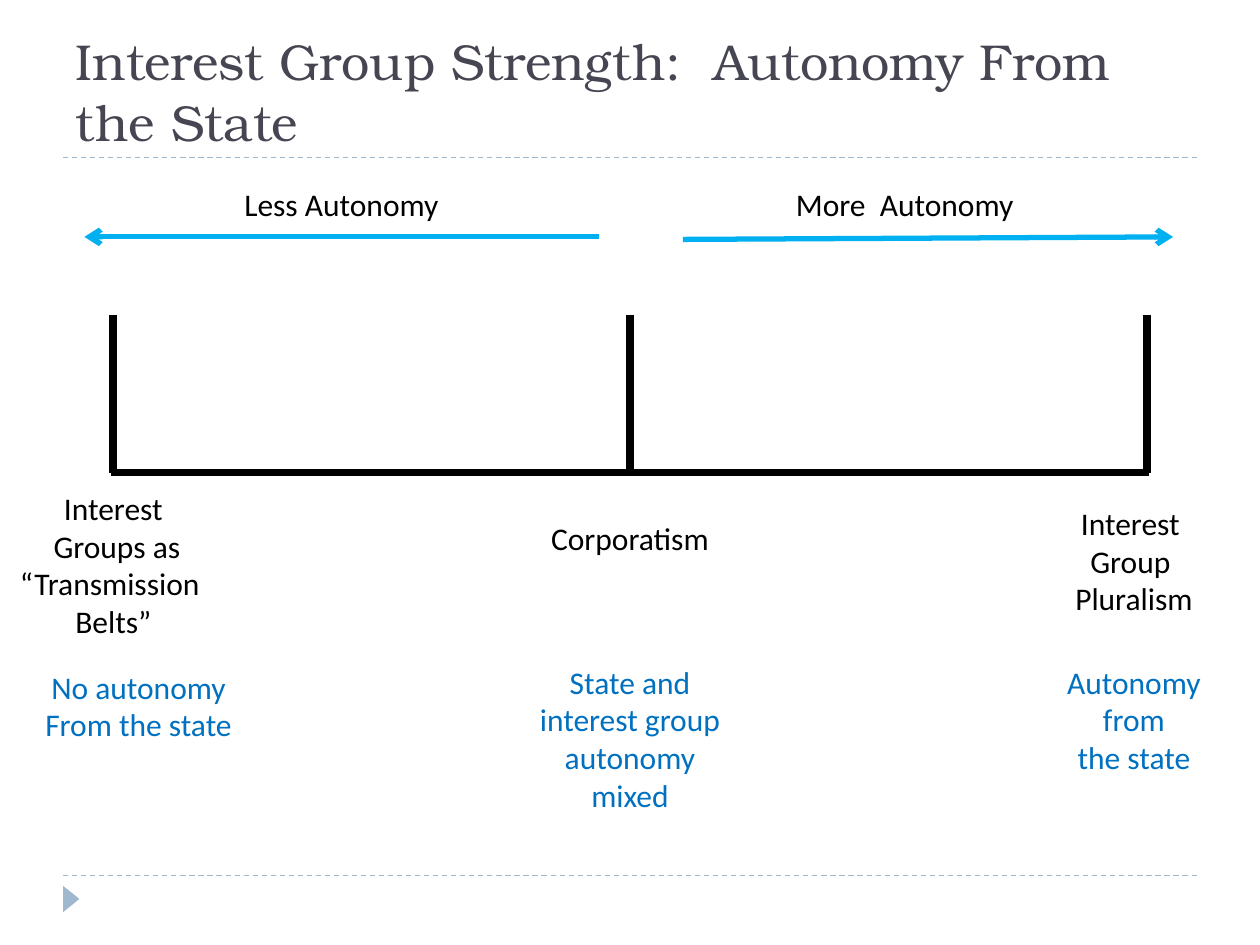
from collections import namedtuple

from lxml.etree import SubElement
from pptx import Presentation
from pptx.dml.color import RGBColor
from pptx.enum.dml import MSO_LINE
from pptx.enum.shapes import MSO_CONNECTOR, MSO_SHAPE
from pptx.enum.text import MSO_ANCHOR, PP_ALIGN
from pptx.oxml.ns import qn
from pptx.util import Inches, Pt

Box = namedtuple("Box", "left top width height")

SLATE = RGBColor(0x46, 0x46, 0x53)
MIST = RGBColor(0x9F, 0xB8, 0xCD)
BLACK = RGBColor(0, 0, 0)
SKY = RGBColor(0x00, 0xB0, 0xF0)
BLUE = RGBColor(0x00, 0x70, 0xC0)
TITLE_FONT, BODY_FONT = "TeX Gyre Bonum", "Calibri"


def add_line(shapes, start, end, color, width):
    line = shapes.add_connector(MSO_CONNECTOR.STRAIGHT,
                                *(Inches(v) for v in (*start, *end)))
    line.line.color.rgb = color
    line.line.width = Pt(width)
    SubElement(line._element.spPr, qn("a:effectLst"))
    return line


def add_arrow(shapes, start, end):
    arrow = add_line(shapes, start, end, SKY, 3)
    SubElement(arrow.line._get_or_add_ln(), qn("a:tailEnd"), type="arrow")


def add_label(shapes, box, lines, color=BLACK):
    tf = shapes.add_textbox(*(Inches(v) for v in box)).text_frame
    tf.word_wrap = True
    tf.text = "\n".join(lines)
    for p in tf.paragraphs:
        p.alignment = PP_ALIGN.CENTER
        p.font.name, p.font.size = BODY_FONT, Pt(18)
        p.font.color.rgb = color


def add_page_frame(shapes, box):
    """Dashed rules along the top and bottom of the box, and a corner marker."""
    right, bottom = box.left + box.width, box.top + box.height
    for y in (bottom, box.top):
        rule = add_line(shapes, (box.left, y), (right, y), MIST, 0.75)
        rule.line.dash_style = MSO_LINE.DASH
    marker = shapes.add_shape(
        MSO_SHAPE.ISOSCELES_TRIANGLE, Inches(box.left - 0.04),
        Inches(bottom + 0.12), Inches(0.21), Inches(0.13))
    marker.rotation = 90
    marker.shadow.inherit = False
    marker.fill.solid()
    marker.fill.fore_color.rgb = MIST
    marker.line.fill.background()


def add_title(title, box, text):
    title.left, title.top, title.width, title.height = (Inches(v) for v in box)
    tf = title.text_frame
    tf.text = text
    tf.word_wrap = True
    tf.vertical_anchor = MSO_ANCHOR.BOTTOM
    p = tf.paragraphs[0]
    p.alignment = PP_ALIGN.LEFT
    p.font.name, p.font.size = TITLE_FONT, Pt(28.8)
    p.font.color.rgb = SLATE


def add_directions(shapes, box):
    """Arrows from near the centre to both ends of the box, labelled above."""
    y = box.top + box.height
    add_arrow(shapes, (box.left + 4.08, y), (box.left, y))
    add_arrow(shapes, (box.left + 4.75, y + 0.02), (box.left + box.width, y))
    for offset, text in ((0.83, "Less Autonomy"), (5.3, "More  Autonomy")):
        add_label(shapes, Box(box.left + offset, box.top, 2.42, 0.4), [text])


def add_scale(shapes, box):
    """Baseline with a tall tick at each end and one in the middle."""
    scale = shapes.add_group_shape().shapes
    base, right = box.top + box.height, box.left + box.width
    add_line(scale, (box.left - 0.02, base), (right + 0.02, base), BLACK, 4.5)
    for x in (box.left, right, box.left + box.width / 2):
        add_line(scale, (x, base), (x, box.top), BLACK, 4.5)


def add_captions(shapes, box, captions, color):
    """Captions given as centre, top and width shares of the box, and lines."""
    for center, top, width, lines in captions:
        w = width * box.width
        add_label(shapes, Box(box.left + center * box.width - w / 2,
                              box.top + top * box.height, w,
                              0.1 + 0.3 * len(lines)), lines, color)


def main():
    prs = Presentation()
    prs.slide_width, prs.slide_height = Inches(10), Inches(7.5)
    slide = prs.slides.add_slide(prs.slide_layouts[5])
    shapes = slide.shapes

    add_page_frame(shapes, Box(0.5, 1.25, 9, 5.7))
    add_title(shapes.title, Box(0.5, 0.17, 9, 1.08),
              "Interest Group Strength:  Autonomy From the State")
    add_directions(shapes, Box(0.67, 1.42, 8.64, 0.46))
    add_scale(shapes, Box(0.9, 2.5, 8.2, 1.25))
    add_captions(shapes, Box(0, 3.83, 10, 1.2), (
        (0.09, 0, 0.21,
         ["Interest", " Groups as", "“Transmission ", "Belts”"]),
        (0.5, 0.2, 0.24, ["Corporatism"]),
        (0.9, 0.1, 0.19, ["Interest ", "Group ", "Pluralism"]),
    ), BLACK)
    add_captions(shapes, Box(0, 5.21, 10, 1), (
        (0.11, 0.04, 0.19, ["No autonomy", "From the state"]),
        (0.5, 0, 0.19, ["State and interest group autonomy mixed"]),
        (0.9, 0, 0.19, ["Autonomy", " from ", "the state"]),
    ), BLUE)
    prs.save("out.pptx")


if __name__ == "__main__":
    main()
